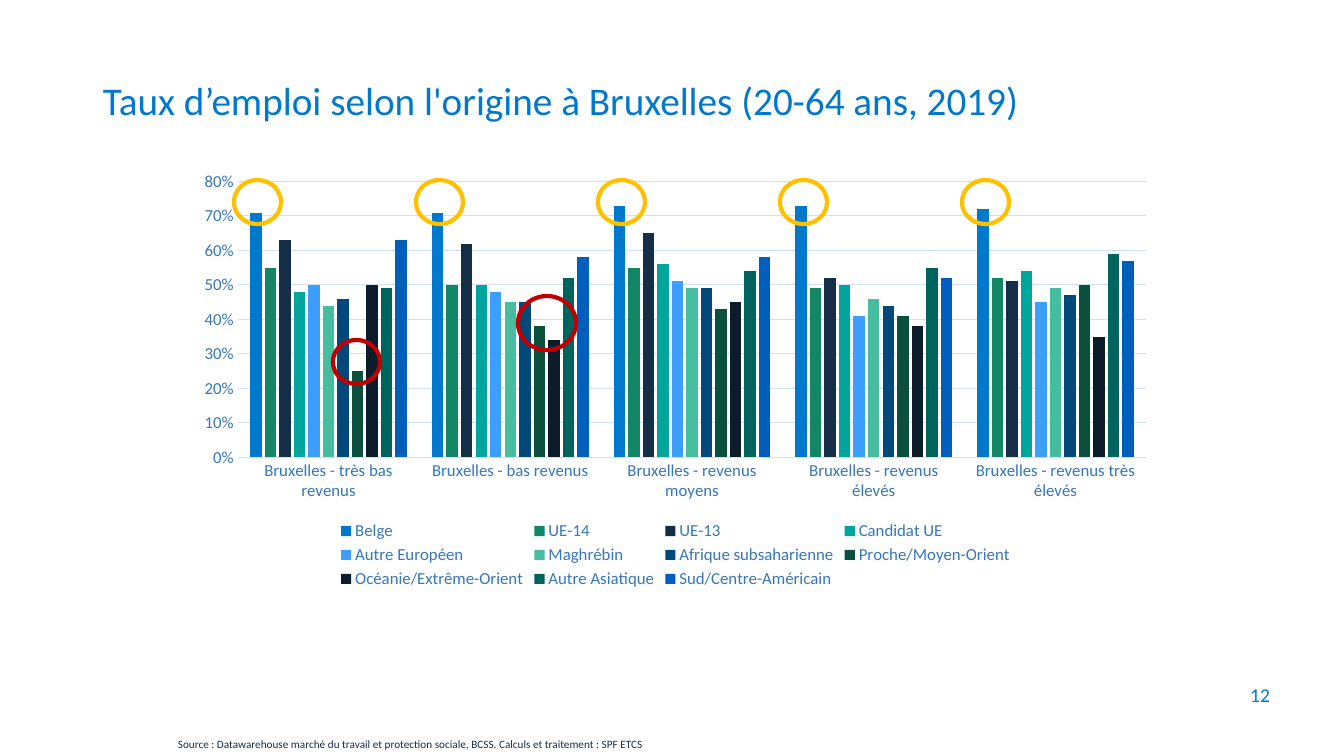
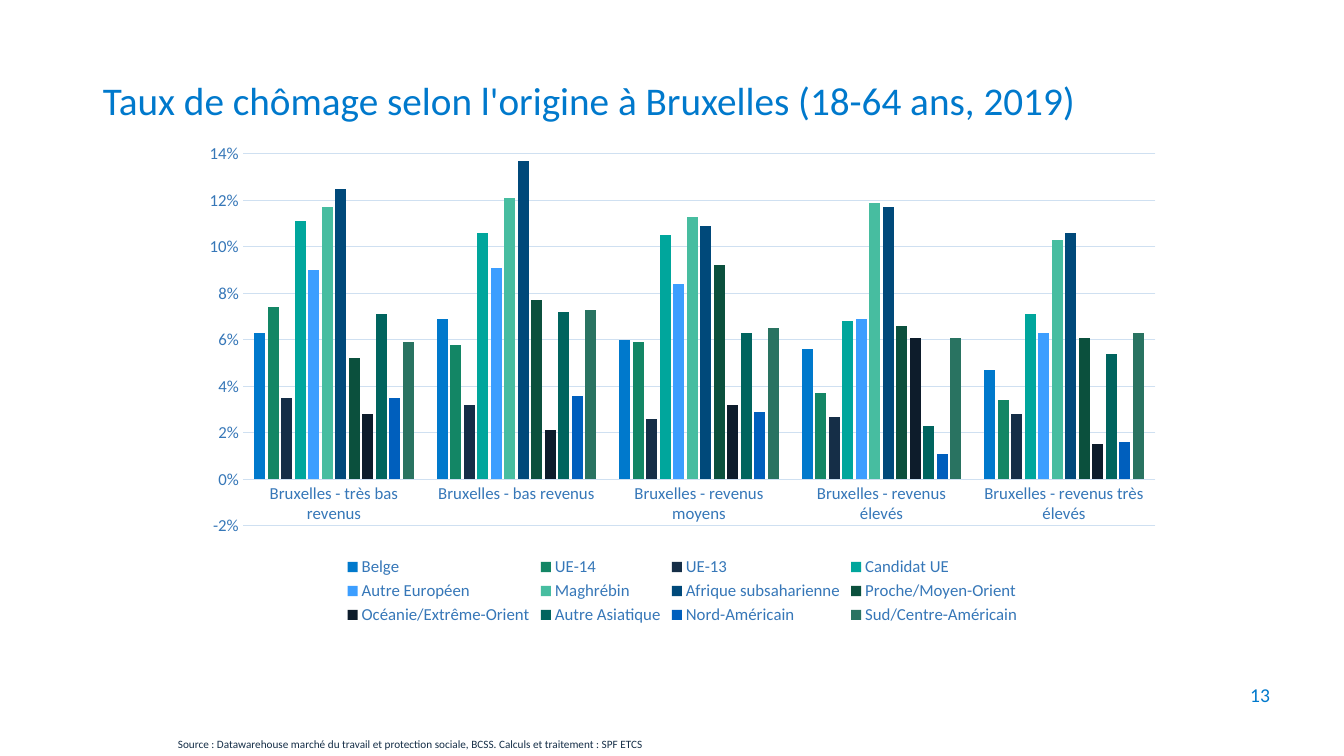
from pptx import Presentation
from pptx.chart.data import CategoryChartData
from pptx.dml.color import RGBColor
from pptx.enum.chart import XL_CHART_TYPE, XL_LEGEND_POSITION, XL_TICK_MARK
from pptx.enum.shapes import MSO_SHAPE
from pptx.enum.text import MSO_ANCHOR, PP_ALIGN
from pptx.util import Pt

COLUMNS = XL_CHART_TYPE.COLUMN_CLUSTERED
BOTTOM = XL_LEGEND_POSITION.BOTTOM
NO_TICK = XL_TICK_MARK.NONE
ELLIPSE = MSO_SHAPE.OVAL
TOP, MIDDLE = MSO_ANCHOR.TOP, MSO_ANCHOR.MIDDLE
LEFT, RIGHT = PP_ALIGN.LEFT, PP_ALIGN.RIGHT

FONT = "Calibri"
EMU_PER_PX = 914400 / 100.8
COLORS = {
    "title": "0079CC", "text": "152E47", "axis": "3677B8", "grid": "CFE0F1",
    "high": "FFC000", "low": "C00000",
}
ORIGIN_COLORS = {
    "Belge": "0079CC", "UE-14": "138665", "UE-13": "152E47",
    "Candidat UE": "00A69C", "Autre Européen": "3C9EFF",
    "Maghrébin": "47BDA0", "Afrique subsaharienne": "00497A",
    "Proche/Moyen-Orient": "0B503D", "Océanie/Extrême-Orient": "0D1C2B",
    "Autre Asiatique": "00645E", "Nord-Américain": "005FBD",
    "Sud/Centre-Américain": "297361",
}
INCOMES = ["très bas revenus", "bas revenus", "revenus moyens",
           "revenus élevés", "revenus très élevés"]
SOURCE = ("Source : Datawarehouse marché du travail et protection sociale, "
          "BCSS. Calculs et traitement : SPF ETCS")

# Values in percent, one per income group
EMPLOYMENT = {
    "Belge": [71, 71, 73, 73, 72],
    "UE-14": [55, 50, 55, 49, 52],
    "UE-13": [63, 62, 65, 52, 51],
    "Candidat UE": [48, 50, 56, 50, 54],
    "Autre Européen": [50, 48, 51, 41, 45],
    "Maghrébin": [44, 45, 49, 46, 49],
    "Afrique subsaharienne": [46, 45, 49, 44, 47],
    "Proche/Moyen-Orient": [25, 38, 43, 41, 50],
    "Océanie/Extrême-Orient": [50, 34, 45, 38, 35],
    "Autre Asiatique": [49, 52, 54, 55, 59],
    "Sud/Centre-Américain": [63, 58, 58, 52, 57],
}
UNEMPLOYMENT = {
    "Belge": [6.3, 6.9, 6, 5.6, 4.7],
    "UE-14": [7.4, 5.8, 5.9, 3.7, 3.4],
    "UE-13": [3.5, 3.2, 2.6, 2.7, 2.8],
    "Candidat UE": [11.1, 10.6, 10.5, 6.8, 7.1],
    "Autre Européen": [9, 9.1, 8.4, 6.9, 6.3],
    "Maghrébin": [11.7, 12.1, 11.3, 11.9, 10.3],
    "Afrique subsaharienne": [12.5, 13.7, 10.9, 11.7, 10.6],
    "Proche/Moyen-Orient": [5.2, 7.7, 9.2, 6.6, 6.1],
    "Océanie/Extrême-Orient": [2.8, 2.1, 3.2, 6.1, 1.5],
    "Autre Asiatique": [7.1, 7.2, 6.3, 2.3, 5.4],
    "Nord-Américain": [3.5, 3.6, 2.9, 1.1, 1.6],
    "Sud/Centre-Américain": [5.9, 7.3, 6.5, 6.1, 6.3],
}

# Circles: left, top, width, height, colour
CIRCLES = [(234 + 182 * i, 180, 47, 44, "high") for i in range(len(INCOMES))]
CIRCLES += [(333, 340, 47, 44, "low"), (518, 296, 58, 54, "low")]

SLIDES = [
    {"number": 12, "title": "Taux d’emploi selon l'origine à Bruxelles (20-64 ans, 2019)",
     "box": (185, 163, 981, 430), "rates": EMPLOYMENT, "circles": CIRCLES,
     "scale": (0, 0.8, 0.1), "recolor": {"Sud/Centre-Américain": "005FBD"}},
    {"number": 13, "title": "Taux de chômage selon l'origine à Bruxelles (18-64 ans, 2019)",
     "box": (190, 134, 985, 495), "rates": UNEMPLOYMENT, "circles": [],
     "scale": (-0.02, 0.14, 0.02), "recolor": {}},
]


def emu(*lengths):
    return [round(n * EMU_PER_PX) for n in lengths]


def add_text(s, box, text, size, color, anchor=MIDDLE, align=LEFT):
    tf = s.shapes.add_textbox(*emu(*box)).text_frame
    tf.word_wrap = True
    tf.vertical_anchor = anchor
    p = tf.paragraphs[0]
    p.alignment = align
    p.line_spacing = 0.9 if size == 28 else 1.0
    r = p.add_run()
    r.text = text
    r.font.name, r.font.size = FONT, Pt(size)
    r.font.color.rgb = RGBColor.from_string(COLORS[color])


prs = Presentation()
prs.slide_width, prs.slide_height = emu(1344, 756)

for item in SLIDES:
    s = prs.slides.add_slide(prs.slide_layouts[6])

    # Title, page number, source
    add_text(s, (93, 30, 1006, 146), item["title"], 28, "title")
    add_text(s, (978, 675, 302, 40), str(item["number"]), 14, "title", align=RIGHT)
    add_text(s, (168, 732, 511, 24), SOURCE, 8, "text", anchor=TOP)

    # Chart
    data = CategoryChartData(number_format="0%")
    data.categories = [f"Bruxelles - {income}" for income in INCOMES]
    for origin, rates in item["rates"].items():
        data.add_series(origin, [round(v / 100, 3) for v in rates])
    chart = s.shapes.add_chart(COLUMNS, *emu(*item["box"]), data).chart
    chart.has_title = False
    chart.font.name, chart.font.size = FONT, Pt(12)
    chart.font.color.rgb = RGBColor.from_string(COLORS["text"])

    plot = chart.plots[0]
    plot.gap_width, plot.overlap = 219, -27
    plot.vary_by_categories = False
    colors = ORIGIN_COLORS | item["recolor"]
    for series in plot.series:
        series.invert_if_negative = False
        series.format.fill.solid()
        series.format.fill.fore_color.rgb = RGBColor.from_string(colors[series.name])

    # Axes and legend
    cat, val = chart.category_axis, chart.value_axis
    chart.has_legend = True
    chart.legend.position = BOTTOM
    chart.legend.include_in_layout = False
    for font in (cat.tick_labels.font, val.tick_labels.font, chart.legend.font):
        font.name, font.size = FONT, Pt(12)
        font.color.rgb = RGBColor.from_string(COLORS["axis"])
    for axis in (cat, val):
        axis.major_tick_mark = axis.minor_tick_mark = NO_TICK
    for line in (cat.format.line, val.major_gridlines.format.line):
        line.color.rgb = RGBColor.from_string(COLORS["grid"])
        line.width = Pt(0.75)
    val.format.line.fill.background()
    val.minimum_scale, val.maximum_scale, val.major_unit = item["scale"]
    val.tick_labels.number_format = "0%"
    val.tick_labels.number_format_is_linked = False

    # Circles
    for *box, color in item["circles"]:
        sp = s.shapes.add_shape(ELLIPSE, *emu(*box))
        sp.shadow.inherit = False
        sp.fill.background()
        sp.line.color.rgb = RGBColor.from_string(COLORS[color])
        sp.line.width = Pt(3)

prs.save("out.pptx")
